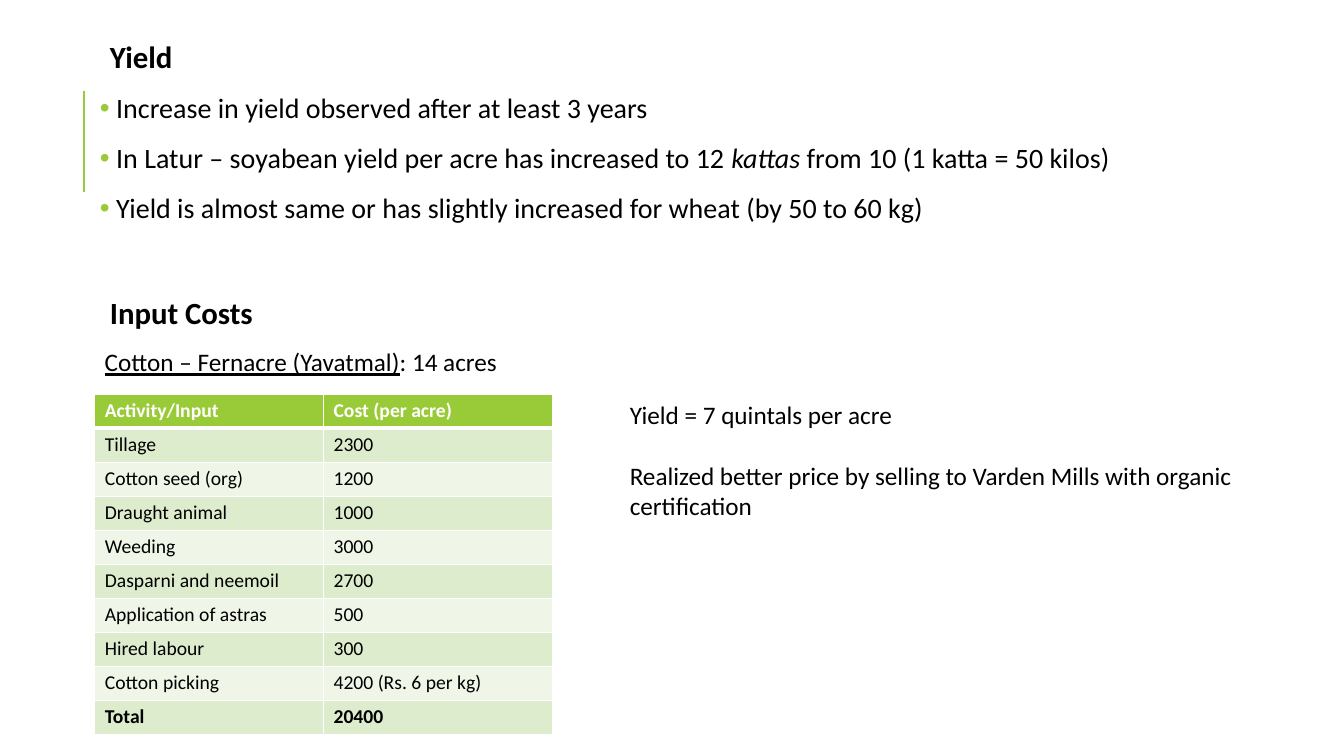
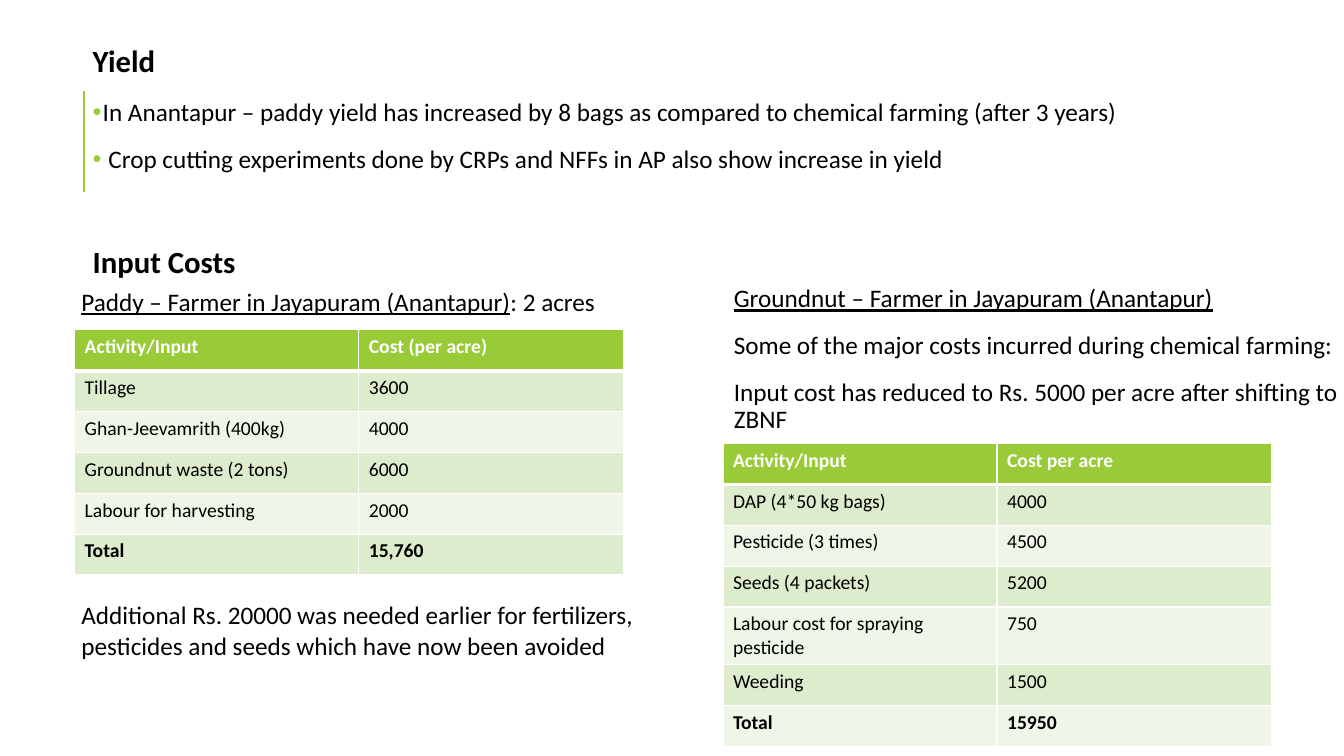
from lxml.etree import SubElement
from pptx import Presentation
from pptx.dml.color import RGBColor
from pptx.enum.shapes import MSO_CONNECTOR
from pptx.enum.text import MSO_ANCHOR, MSO_AUTO_SIZE, PP_ALIGN
from pptx.oxml.ns import qn
from pptx.util import Pt

FONT = "Calibri"
GREEN, BLACK, WHITE = "99CB38", "000000", "FFFFFF"
BANDS = ("DEECCE", "EFF6E8")
HEADING_SIZE, NOTE_SIZE, CELL_SIZE = 22, 18, 14
TIGHT, NORMAL = 3.6, 7.2  # side insets of outline text and of plain notes
HEADING_BOX = (300, 32)  # width, height

# A paragraph is a list of (text, style) segments; style is "", "i" or "u".
# Bullets pair a hanging indent with a paragraph. Boxes are left, top, width, height.
SLIDES = [
    {
        "title": ("Yield", 74.9, 26),
        "bullet_box": (67.7, 64, 838.8, 112),
        "bullet_size": 20,
        "bullets": [
            (11.7, [("Increase in yield observed after at least 3 years", "")]),
            (11.7, [("In Latur – soyabean yield per acre has increased to 12 ", ""),
                    ("kattas ", "i"), ("from 10 (1 katta = 50 kilos)", "")]),
            (11.7, [("Yield is almost same or has slightly increased for wheat (by 50 to 60 kg)", "")]),
        ],
        "heading": ("Input Costs", 74.9, 209),
        "notes": [
            {"box": (67.7, 244.1, 320, 29),
             "paragraphs": [[("Cotton – Fernacre (Yavatmal)", "u"), (": 14 acres", "")]]},
            {"box": (442.8, 281.5, 463.7, 94), "after": 22,
             "paragraphs": [
                 [("Yield = 7 quintals per acre", "")],
                 [("Realized better price by selling to Varden Mills with organic certification", "")]]},
        ],
        "tables": [
            {"at": (67.7, 281.5), "columns": (163.4, 163.4), "row_height": 24.3,
             "rows": [
                 ("Activity/Input", "Cost (per acre)"),
                 ("Tillage", "2300"),
                 ("Cotton seed (org)", "1200"),
                 ("Draught animal", "1000"),
                 ("Weeding", "3000"),
                 ("Dasparni and neemoil", "2700"),
                 ("Application of astras", "500"),
                 ("Hired labour", "300"),
                 ("Cotton picking", "4200 (Rs. 6 per kg)"),
                 ("Total", "20400")]},
        ],
    },
    {
        "title": ("Yield", 62.6, 29.5),
        "bullet_box": (62.6, 67.7, 835.2, 80),
        "bullet_size": 18,
        "bullets": [
            (7.2, [("In Anantapur – paddy yield has increased by 8 bags as compared to "
                    "chemical farming (after 3 years)", "")]),
            (11.3, [("Crop cutting experiments done by CRPs and NFFs in AP also show "
                     "increase in yield", "")]),
        ],
        "heading": ("Input Costs", 62.6, 172.5),
        "notes": [
            {"box": (51.1, 200.9, 419.8, 29),
             "paragraphs": [[("Paddy – Farmer in Jayapuram (Anantapur)", "u"), (": 2 acres", "")]]},
            {"box": (51.1, 424.8, 419.8, 51),
             "paragraphs": [[("Additional Rs. 20000 was needed earlier for fertilizers, pesticides "
                              "and seeds which have now been avoided", "")]]},
            {"box": (520.6, 200.9, 440, 110), "outline": True,
             "paragraphs": [
                 [("Groundnut – Farmer in Jayapuram (Anantapur)", "u")],
                 [("Some of the major costs incurred during chemical farming:", "")],
                 [("Input cost has reduced to Rs. 5000 per acre after shifting to ZBNF", "")]]},
        ],
        "tables": [
            {"at": (53.3, 235.6), "columns": (203, 189.4), "row_height": 29.2,
             "rows": [
                 ("Activity/Input", "Cost (per acre)"),
                 ("Tillage", "3600"),
                 ("Ghan-Jeevamrith (400kg)", "4000"),
                 ("Groundnut waste (2 tons)", "6000"),
                 ("Labour for harvesting", "2000"),
                 ("Total", "15,760")]},
            {"at": (516.4, 316.8), "columns": (195.8, 195.8), "row_height": 29.2,
             "rows": [
                 ("Activity/Input", "Cost per acre"),
                 ("DAP (4*50 kg bags)", "4000"),
                 ("Pesticide (3 times)", "4500"),
                 ("Seeds (4 packets)", "5200"),
                 ("Labour cost for spraying pesticide", "750"),
                 ("Weeding", "1500"),
                 ("Total", "15950")]},
        ],
    },
]


def color(hex_string):
    return RGBColor.from_string(hex_string)


def format_font(font, size, fill=BLACK, bold=False):
    font.name, font.size, font.bold = FONT, Pt(size), bold
    font.color.rgb = color(fill)


def prepare_frame(shape, box, inset):
    """Place a text shape and give it the common frame settings."""
    shape.left, shape.top, shape.width, shape.height = map(Pt, box)
    frame = shape.text_frame
    frame.word_wrap, frame.auto_size = True, MSO_AUTO_SIZE.NONE
    frame.vertical_anchor = MSO_ANCHOR.TOP
    frame.margin_left = frame.margin_right = Pt(inset)
    frame.margin_top = frame.margin_bottom = Pt(3.6)
    return frame


def fill_paragraphs(frame, paragraphs, size, bold=False):
    for index, segments in enumerate(paragraphs):
        paragraph = frame.add_paragraph() if index else frame.paragraphs[0]
        paragraph.alignment = PP_ALIGN.LEFT
        for text, style in segments:
            run = paragraph.add_run()
            run.text = text
            format_font(run.font, size, bold=bold)
            if style == "i":
                run.font.italic = True
            elif style == "u":
                run.font.underline = True


def space_outline(frame):
    for paragraph in frame.paragraphs:
        paragraph.line_spacing = 0.9
        paragraph.space_before, paragraph.space_after = Pt(12), Pt(2)


def add_bullet(paragraph, hang):
    properties = paragraph._p.get_or_add_pPr()
    properties.set("marL", str(Pt(hang)))
    properties.set("indent", str(-Pt(hang)))
    bullet_color = SubElement(properties, qn("a:buClr"))
    SubElement(bullet_color, qn("a:srgbClr"), val=GREEN)
    SubElement(properties, qn("a:buChar"), char="•")


def fill_heading(shape, text, left, top):
    frame = prepare_frame(shape, (left, top, *HEADING_BOX), TIGHT)
    fill_paragraphs(frame, [[(text, "")]], HEADING_SIZE, bold=True)
    space_outline(frame)


def fill_bullets(shape, box, bullets, size):
    frame = prepare_frame(shape, box, TIGHT)
    fill_paragraphs(frame, [segments for _, segments in bullets], size)
    space_outline(frame)
    for paragraph, (hang, _) in zip(frame.paragraphs, bullets):
        add_bullet(paragraph, hang)


def add_text_box(slide):
    return slide.shapes.add_textbox(0, 0, 0, 0)


def add_note(slide, note):
    outline = note.get("outline", False)
    frame = prepare_frame(add_text_box(slide), note["box"], TIGHT if outline else NORMAL)
    fill_paragraphs(frame, note["paragraphs"], NOTE_SIZE)
    if outline:
        space_outline(frame)
    elif "after" in note:
        frame.paragraphs[0].space_after = Pt(note["after"])


def add_bottom_border(cell, width):
    properties = cell._tc.get_or_add_tcPr()
    border = SubElement(properties, qn("a:lnB"), w=str(Pt(width)))
    SubElement(SubElement(border, qn("a:solidFill")), qn("a:srgbClr"), val=WHITE)
    properties.insert(0, border)


def add_cost_table(slide, at, columns, row_height, rows):
    frame = slide.shapes.add_table(len(rows), len(columns), *map(Pt, at),
                                   Pt(sum(columns)), Pt(row_height * len(rows)))
    table = frame.table
    for column, width in zip(table.columns, columns):
        column.width = Pt(width)
    for row_index, values in enumerate(rows):
        table.rows[row_index].height = Pt(row_height)
        header, total = row_index == 0, row_index == len(rows) - 1
        for column_index, value in enumerate(values):
            cell = table.cell(row_index, column_index)
            cell.fill.solid()
            cell.fill.fore_color.rgb = color(GREEN if header else BANDS[(row_index - 1) % 2])
            if header:
                add_bottom_border(cell, 3)
            cell.text_frame.text = value
            format_font(cell.text_frame.paragraphs[0].runs[0].font, CELL_SIZE,
                        WHITE if header else BLACK, bold=header or total)


def add_side_rule(slide):
    rule = slide.shapes.add_connector(MSO_CONNECTOR.STRAIGHT, Pt(60), Pt(137), Pt(60), Pt(65))
    rule.line.color.rgb = color(GREEN)
    rule.line.width = Pt(1.5)
    SubElement(rule._element.spPr, qn("a:effectLst"))


def build_slide(presentation, content):
    slide = presentation.slides.add_slide(presentation.slide_layouts[1])
    add_side_rule(slide)
    fill_heading(slide.shapes.title, *content["title"])
    fill_bullets(slide.placeholders[1], content["bullet_box"], content["bullets"],
                 content["bullet_size"])
    fill_heading(add_text_box(slide), *content["heading"])
    for note in content["notes"]:
        add_note(slide, note)
    for table in content["tables"]:
        add_cost_table(slide, **table)


def main():
    presentation = Presentation()
    presentation.slide_width, presentation.slide_height = Pt(960), Pt(540)
    for content in SLIDES:
        build_slide(presentation, content)
    presentation.save("out.pptx")


if __name__ == "__main__":
    main()
